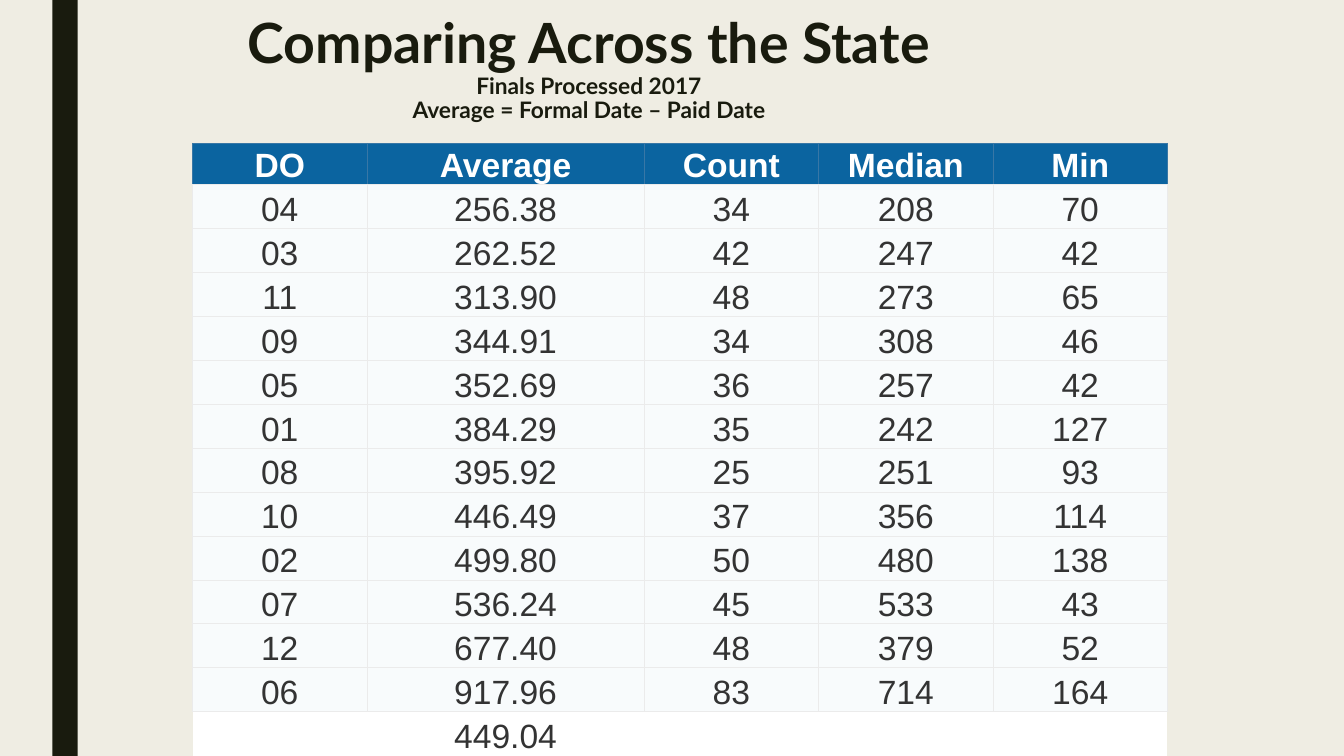
from lxml.etree import SubElement
from pptx import Presentation
from pptx.dml.color import RGBColor
from pptx.enum.shapes import MSO_SHAPE
from pptx.enum.text import MSO_ANCHOR, PP_ALIGN
from pptx.oxml.ns import qn
from pptx.util import Inches, Pt

COLORS = {
    "background": "EFEDE3",
    "dark": "191B0E",
    "header": "0B64A0",
    "header_border": "3877A6",
    "border": "EBEBEB",
    "body": "F8FBFC",
    "white": "FFFFFF",
    "text": "333333",
}
TITLE_LINES = [
    ("Comparing Across the State", 39.6),
    ("Finals Processed 2017", 16.2),
    ("Average = Formal Date – Paid Date", 16.2),
]
COLUMN_WIDTHS = [1.73, 2.75, 1.73, 1.73, 1.73]
HEADER_HEIGHT = 0.38
ROWS = [
    ("DO", "Average", "Count", "Median", "Min"),
    ("04", "256.38", "34", "208", "70"),
    ("03", "262.52", "42", "247", "42"),
    ("11", "313.90", "48", "273", "65"),
    ("09", "344.91", "34", "308", "46"),
    ("05", "352.69", "36", "257", "42"),
    ("01", "384.29", "35", "242", "127"),
    ("08", "395.92", "25", "251", "93"),
    ("10", "446.49", "37", "356", "114"),
    ("02", "499.80", "50", "480", "138"),
    ("07", "536.24", "45", "533", "43"),
    ("12", "677.40", "48", "379", "52"),
    ("06", "917.96", "83", "714", "164"),
    ("", "449.04", "", "", ""),
]


def color(name):
    """Return the named palette colour."""
    return RGBColor.from_string(COLORS[name])


def write_text(paragraph, text, *, size, font, fill, bold=False, spacing=None):
    """Write one centred, formatted run into a paragraph."""
    paragraph.alignment = PP_ALIGN.CENTER
    paragraph.line_spacing = spacing
    run = paragraph.add_run()
    run.text = text
    run.font.size = Pt(size)
    run.font.name = font
    run.font.bold = bold
    run.font.color.rgb = color(fill)


def set_borders(cell, **borders):
    """Draw the named cell sides, leaving sides given as None unlined."""
    properties = cell._tc.get_or_add_tcPr()
    for side in ("L", "R", "T", "B"):
        line = SubElement(properties, qn(f"a:ln{side}"), w=str(Pt(0.5)))
        if borders[side] is None:
            SubElement(line, qn("a:noFill"))
        else:
            fill = SubElement(line, qn("a:solidFill"))
            SubElement(fill, qn("a:srgbClr"), val=COLORS[borders[side]])


def add_side_bar(slide, left, top, width, height):
    """Add the dark vertical bar."""
    bar = slide.shapes.add_shape(
        MSO_SHAPE.RECTANGLE, Inches(left), Inches(top), Inches(width), Inches(height)
    )
    bar.shadow.inherit = False
    bar.fill.solid()
    bar.fill.fore_color.rgb = color("dark")
    bar.line.fill.background()


def add_title(slide, left, top, width, height):
    """Add the heading with its two smaller lines."""
    box = slide.shapes.add_textbox(
        Inches(left), Inches(top), Inches(width), Inches(height)
    )
    frame = box.text_frame
    frame.word_wrap = True
    frame.vertical_anchor = MSO_ANCHOR.TOP
    for index, (text, size) in enumerate(TITLE_LINES):
        paragraph = frame.add_paragraph() if index else frame.paragraphs[0]
        write_text(paragraph, text, size=size, font="Lato", fill="dark",
                   bold=True, spacing=0.89)


def format_cell(cell, text, *, fill, text_fill, bold, borders):
    """Fill, border and write one table cell."""
    set_borders(cell, **borders)
    cell.fill.solid()
    cell.fill.fore_color.rgb = color(fill)
    cell.vertical_anchor = MSO_ANCHOR.BOTTOM
    cell.margin_left = cell.margin_right = cell.margin_top = Inches(0.01)
    cell.margin_bottom = 0
    if text:
        write_text(cell.text_frame.paragraphs[0], text, size=24, font="Arial",
                   fill=text_fill, bold=bold)


def add_comparison_table(slide, left, top, width, height):
    """Add the office table with equal body rows under its header."""
    table = slide.shapes.add_table(
        len(ROWS), len(COLUMN_WIDTHS),
        Inches(left), Inches(top), Inches(width), Inches(height),
    ).table
    table.horz_banding = False
    for column, share in zip(table.columns, COLUMN_WIDTHS):
        column.width = Inches(width * share / sum(COLUMN_WIDTHS))

    last = len(ROWS) - 1
    body_height = (height - HEADER_HEIGHT) / last
    header = dict(fill="header", text_fill="white", bold=True,
                  borders=dict.fromkeys("LRT", "header_border") | {"B": "border"})
    body = dict(fill="body", text_fill="text", bold=False,
                borders=dict.fromkeys("LRTB", "border"))
    total = body | dict(fill="white",
                        borders=dict.fromkeys("LRB") | {"T": "border"})
    for index, values in enumerate(ROWS):
        table.rows[index].height = Inches(body_height if index else HEADER_HEIGHT)
        style = {0: header, last: total}.get(index, body)
        for column, text in enumerate(values):
            format_cell(table.cell(index, column), text, **style)


def main():
    """Build and save the presentation."""
    presentation = Presentation()
    presentation.slide_width = Inches(13.33)
    presentation.slide_height = Inches(7.5)
    slide = presentation.slides.add_slide(presentation.slide_layouts[6])
    slide.background.fill.solid()
    slide.background.fill.fore_color.rgb = color("background")
    add_side_bar(slide, 0.52, 0, 0.25, 7.5)
    add_title(slide, 0.09, 0.11, 11.5, 0.86)
    add_comparison_table(slide, 1.91, 1.42, 9.67, 6.05)
    presentation.save("out.pptx")


if __name__ == "__main__":
    main()
